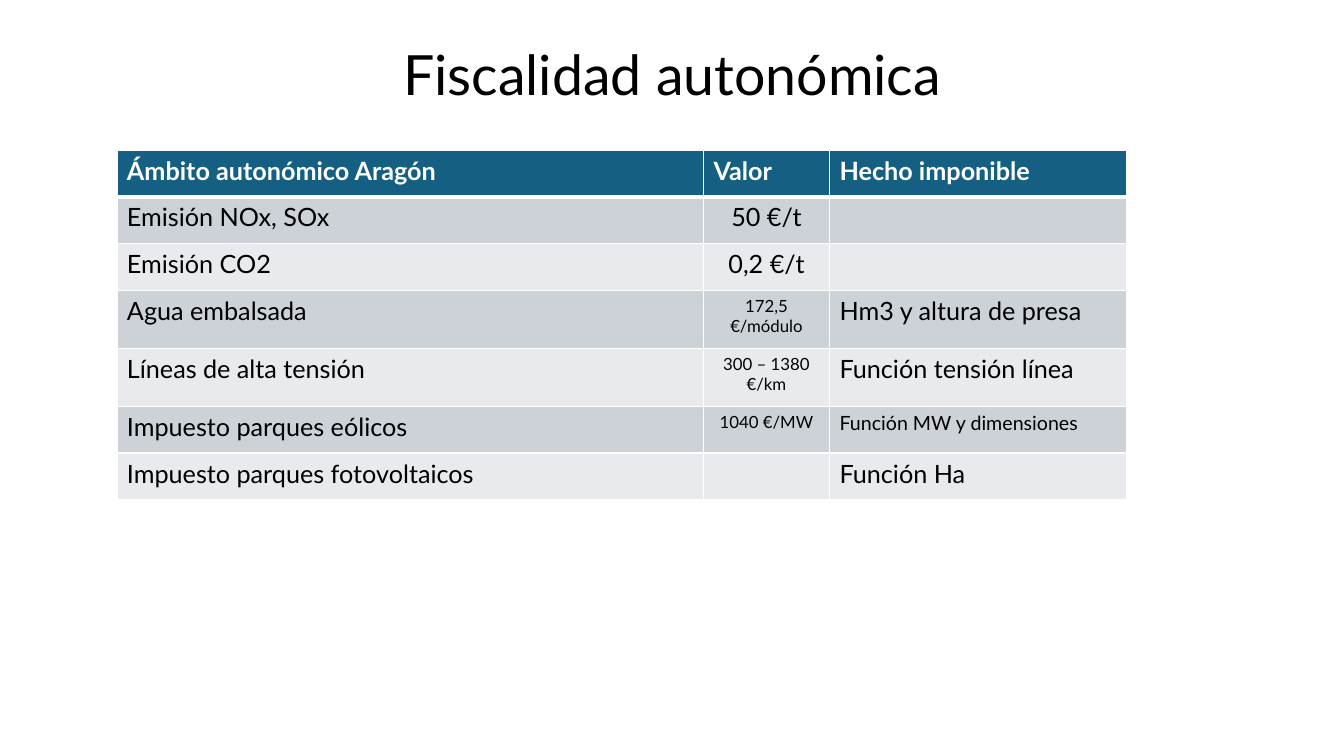
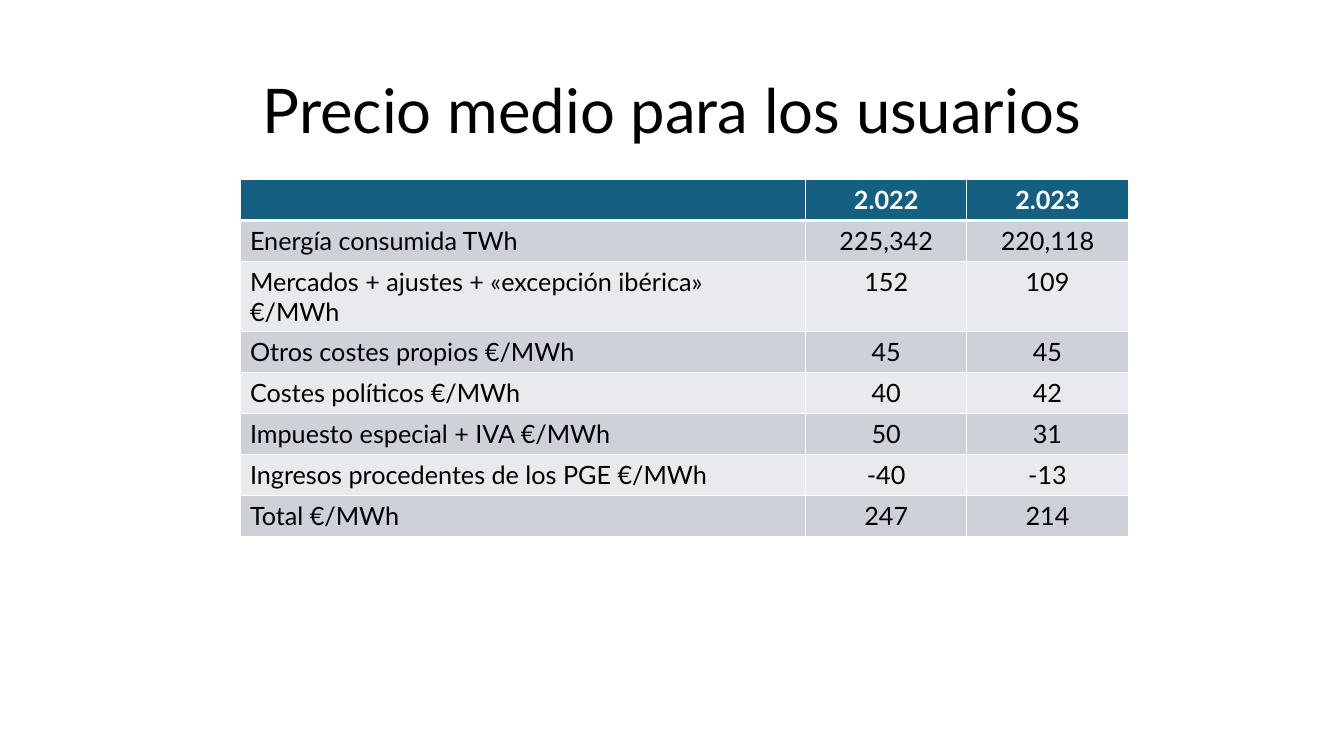
from dataclasses import dataclass

from lxml import etree
from pptx import Presentation
from pptx.dml.color import RGBColor
from pptx.enum.text import MSO_ANCHOR, PP_ALIGN
from pptx.oxml.ns import qn
from pptx.util import Pt

LEFT, CENTER = PP_ALIGN.LEFT, PP_ALIGN.CENTER
MIDDLE = MSO_ANCHOR.MIDDLE


@dataclass(frozen=True)
class Theme:
    font: str = "Lato"
    black: str = "000000"
    white: str = "FFFFFF"
    header: str = "156082"
    bands: tuple = ("CCD2D8", "E8EAED")
    body_size: float = 18
    note_size: float = 14
    small_size: float = 12
    thin_line: float = 1
    thick_line: float = 3


THEME = Theme()


def write_text(frame, text, size=THEME.body_size, color=THEME.black,
               bold=False, align=LEFT, line_spacing=1.0):
    para = frame.paragraphs[0]
    para.alignment = align
    para.line_spacing = line_spacing
    if not text:
        return
    span = para.add_run()
    span.text = text
    span.font.name = THEME.font
    span.font.size = Pt(size)
    span.font.bold = bold
    span.font.color.rgb = RGBColor.from_string(color)


def add_borders(cell, row_index):
    """Thin white rules, with a thick one below the header row."""
    properties = cell._tc.get_or_add_tcPr()
    for side in "LRTB":
        below_header = (row_index, side) in ((0, "B"), (1, "T"))
        width = THEME.thick_line if below_header else THEME.thin_line
        line = etree.SubElement(properties, qn("a:ln" + side), w=str(Pt(width)))
        fill = etree.SubElement(line, qn("a:solidFill"))
        etree.SubElement(fill, qn("a:srgbClr"), val=THEME.white)


# Content: sizes lists the cells that differ from the body size
PAGES = [
    dict(
        title="Fiscalidad autonómica", title_size=39.6, title_height=52.6,
        left=83.5, top=107.3, columns=(419, 90, 212.4),
        heights=(33.4, 33.4, 33.4, 41.4, 41.4, 33.4, 33.4),
        header_aligns=(LEFT, LEFT, LEFT), body_aligns=(LEFT, CENTER, LEFT),
        sizes={(3, 1): THEME.small_size, (4, 1): THEME.small_size,
               (5, 1): THEME.small_size, (5, 2): THEME.note_size},
        rows=[
            ("Ámbito autonómico Aragón", "Valor", "Hecho imponible"),
            ("Emisión NOx, SOx", "50 €/t", ""),
            ("Emisión CO2", "0,2 €/t", ""),
            ("Agua embalsada", "172,5 €/módulo", "Hm3 y altura de presa"),
            ("Líneas de alta tensión", "300 – 1380 €/km", "Función tensión línea"),
            ("Impuesto parques eólicos", "1040 €/MW", "Función MW y dimensiones"),
            ("Impuesto parques fotovoltaicos", "", "Función Ha"),
        ],
    ),
    dict(
        title="Precio medio para los usuarios", title_size=44, title_height=104.4,
        left=171.4, top=128.2, columns=(404, 115.2, 115.2),
        heights=(29.2,) * 8,
        header_aligns=(LEFT, CENTER, CENTER), body_aligns=(LEFT, CENTER, CENTER),
        sizes={},
        rows=[
            ("", "2.022", "2.023"),
            ("Energía consumida TWh", "225,342", "220,118"),
            ("Mercados + ajustes + «excepción ibérica» €/MWh", "152", "109"),
            ("Otros costes propios €/MWh", "45", "45"),
            ("Costes políticos €/MWh", "40", "42"),
            ("Impuesto especial + IVA €/MWh", "50", "31"),
            ("Ingresos procedentes de los PGE €/MWh", "-40", "-13"),
            ("Total €/MWh", "247", "214"),
        ],
    ),
]

deck = Presentation()
deck.slide_width, deck.slide_height = Pt(960), Pt(540)

for content in PAGES:
    page = deck.slides.add_slide(deck.slide_layouts[6])

    # Title
    box = page.shapes.add_textbox(Pt(66.2), Pt(28.8), Pt(828),
                                  Pt(content["title_height"]))
    box.text_frame.word_wrap = True
    box.text_frame.vertical_anchor = MIDDLE
    write_text(box.text_frame, content["title"], size=content["title_size"],
               align=CENTER, line_spacing=0.9)

    # Table grid
    rows, columns, heights = content["rows"], content["columns"], content["heights"]
    table = page.shapes.add_table(
        len(rows), len(columns), Pt(content["left"]), Pt(content["top"]),
        Pt(sum(columns)), Pt(sum(heights))).table
    for column, width in zip(table.columns, columns):
        column.width = Pt(width)
    for row, height in zip(table.rows, heights):
        row.height = Pt(height)

    # Table cells
    for row_index, texts in enumerate(rows):
        is_header = row_index == 0
        fill_color = THEME.header if is_header else THEME.bands[(row_index - 1) % 2]
        aligns = content["header_aligns" if is_header else "body_aligns"]
        for column_index, text in enumerate(texts):
            cell = table.cell(row_index, column_index)
            add_borders(cell, row_index)
            cell.fill.solid()
            cell.fill.fore_color.rgb = RGBColor.from_string(fill_color)
            write_text(
                cell.text_frame, text, bold=is_header, align=aligns[column_index],
                size=content["sizes"].get((row_index, column_index), THEME.body_size),
                color=THEME.white if is_header else THEME.black)

deck.save("out.pptx")
